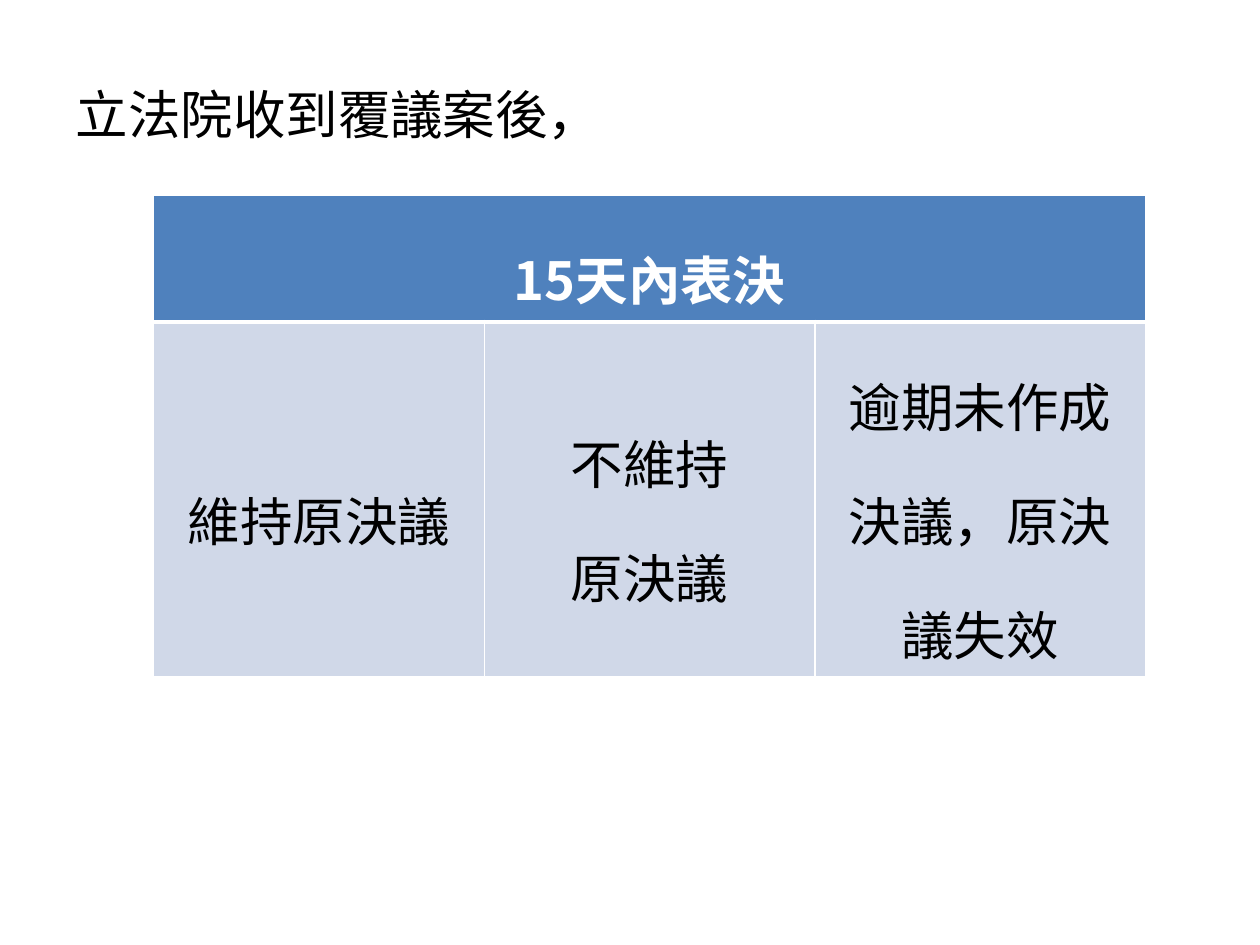
import pptx
import pptx.util
import pptx.dml.color
import pptx.enum.text
import pptx.oxml.ns
import lxml.etree

Inches = pptx.util.Inches
Pt = pptx.util.Pt
FONT = "Noto Sans CJK SC"
WHITE, BLACK, BLUE, PALE = "FFFFFF", "000000", "4F81BD", "D0D8E8"
CHOICES = ["維持原決議", "不維持\n原決議", "逾期未作成決議，原決議失效"]


def color(code):
    return pptx.dml.color.RGBColor.from_string(code)


def add_sub(parent, tag, **attrs):
    return lxml.etree.SubElement(parent, pptx.oxml.ns.qn(tag), **attrs)


def style(para, ink, bold=False):
    """Format every run, for Latin and East Asian letters alike."""
    for run in para.runs:
        run.font.size = Pt(30)
        run.font.bold = bold
        run.font.color.rgb = color(ink)
        run.font.name = FONT
        add_sub(run.font._element, "a:ea", typeface=FONT)


def set_edges(cell, top, low):
    """Draw white cell borders; top and low are widths in points."""
    props = cell._tc.get_or_add_tcPr()
    for side, width in (("L", 1), ("R", 1), ("T", top), ("B", low)):
        line = add_sub(props, "a:ln" + side, w=str(Pt(width)))
        add_sub(add_sub(line, "a:solidFill"), "a:srgbClr", val=WHITE)


def fill_cell(cell, text, back, ink, bold=False):
    cell.fill.solid()
    cell.fill.fore_color.rgb = color(back)
    cell.text_frame.text = text
    for para in cell.text_frame.paragraphs:
        para.alignment = pptx.enum.text.PP_ALIGN.CENTER
        para.line_spacing = 1.5
        style(para, ink, bold)


def add_lead(slide, text):
    """Put the opening line in the body placeholder, with no bullet."""
    body = slide.placeholders[1]
    body.left, body.top = Inches(0.5), Inches(0.6)
    body.width, body.height = Inches(9), Inches(6.1)
    body.text_frame.text = text
    para = body.text_frame.paragraphs[0]
    props = para._p.get_or_add_pPr()
    props.set("marL", "0")
    props.set("indent", "0")
    add_sub(props, "a:buNone")
    para.space_before = Pt(0)
    style(para, BLACK)


def add_grid(slide, head, items):
    """Build a table with one merged header over a row of choices."""
    count = len(items)
    table = slide.shapes.add_table(
        2, count, Inches(1.22), Inches(1.55), Inches(7.87), Inches(2.76)).table
    table.rows[0].height = Inches(0.75)
    table.rows[1].height = Inches(2.01)
    for col in range(count):
        set_edges(table.cell(0, col), 1, 3)
        set_edges(table.cell(1, col), 3, 1)
    table.cell(0, 0).merge(table.cell(0, count - 1))
    fill_cell(table.cell(0, 0), head, BLUE, WHITE, True)
    for col, item in enumerate(items):
        cell = table.cell(1, col)
        fill_cell(cell, item, PALE, BLACK)
        cell.vertical_anchor = pptx.enum.text.MSO_ANCHOR.MIDDLE


def main():
    deck = pptx.Presentation()
    deck.slide_width, deck.slide_height = Inches(10), Inches(7.5)
    slide = deck.slides.add_slide(deck.slide_layouts[1])
    # The slide has body text but no title
    title = slide.shapes.title._element
    title.getparent().remove(title)
    add_lead(slide, "立法院收到覆議案後，")
    add_grid(slide, "15天內表決", CHOICES)
    deck.save("out.pptx")


if __name__ == "__main__":
    main()
